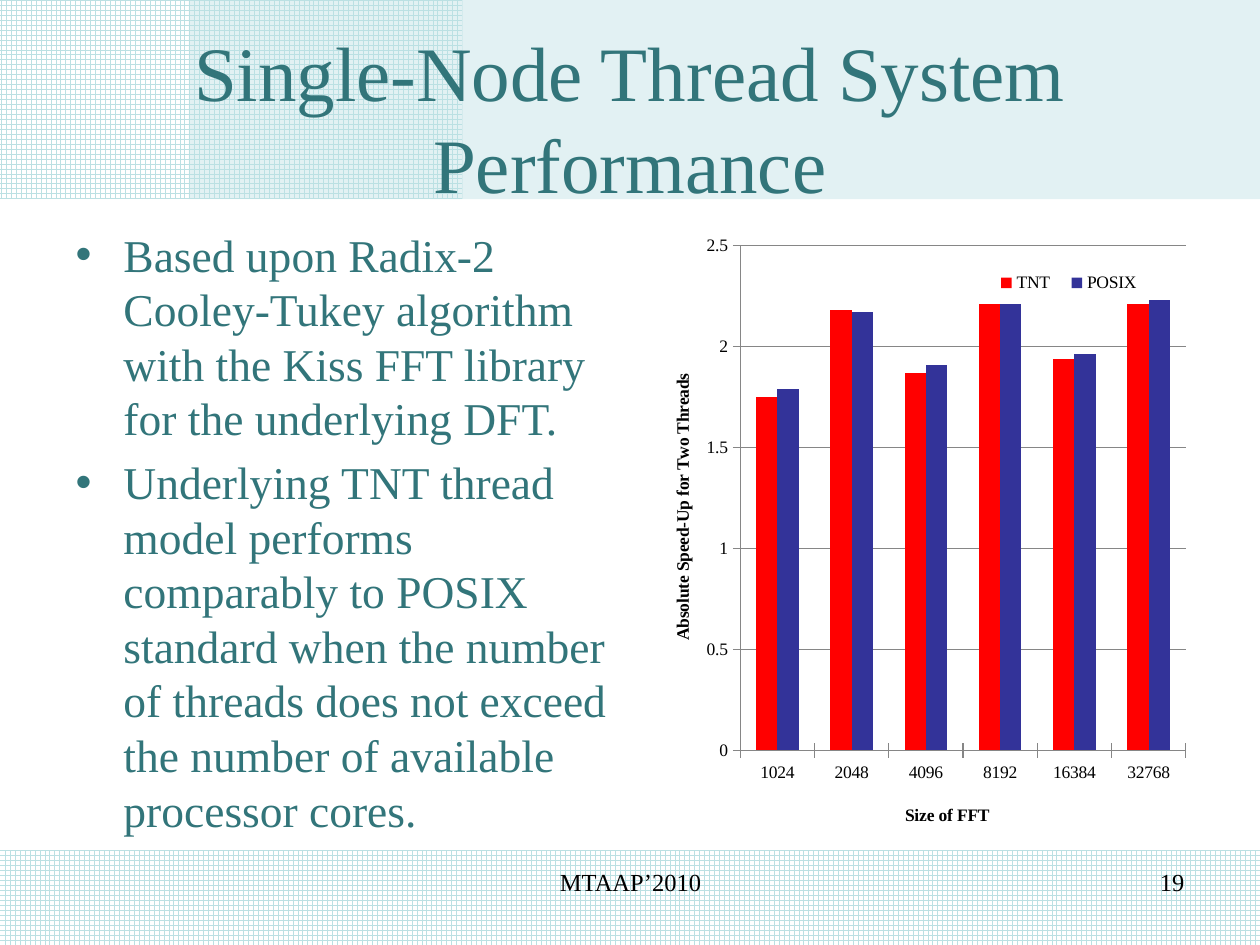
from dataclasses import dataclass
from typing import Optional

from lxml import etree
from pptx import Presentation
from pptx.chart.data import CategoryChartData
from pptx.dml.color import RGBColor
from pptx.enum.chart import XL_CHART_TYPE, XL_LEGEND_POSITION, XL_TICK_MARK
from pptx.enum.dml import MSO_PATTERN
from pptx.enum.shapes import MSO_SHAPE
from pptx.enum.text import MSO_ANCHOR, MSO_AUTO_SIZE, PP_ALIGN
from pptx.oxml.ns import qn
from pptx.util import Inches, Pt

CLUSTERED = XL_CHART_TYPE.COLUMN_CLUSTERED
LEGEND_RIGHT = XL_LEGEND_POSITION.RIGHT
CROSS = XL_TICK_MARK.CROSS
GRID_PATTERN = MSO_PATTERN.LARGE_GRID
PROCESS = MSO_SHAPE.FLOWCHART_PROCESS
MIDDLE, TOP = MSO_ANCHOR.MIDDLE, MSO_ANCHOR.TOP
CENTER, LEFT, RIGHT = PP_ALIGN.CENTER, PP_ALIGN.LEFT, PP_ALIGN.RIGHT

FONT = "Times New Roman"
COLORS = {
    "band": "BBE0E3", "paper": "FFFFFF", "heading": "32757A",
    "ink": "000000", "rule": "868686", "TNT": "FF0000", "POSIX": "333399",
}
WIDTH, HEIGHT = 10, 7.5
MARGIN = 0.5
COLUMN = 4.42
CONTENT_TOP, CONTENT_HEIGHT = 1.75, 4.95
HEADER_HEIGHT, FOOTER_TOP = 1.58, 6.75
BULLET_INDENT = 0.38

POINTS = [
    "Based upon Radix-2 Cooley-Tukey algorithm with the Kiss FFT library "
    "for the underlying DFT.",
    "Underlying TNT thread model performs comparably to POSIX standard when "
    "the number of threads does not exceed the number of available "
    "processor cores.",
]
FFT_SIZES = ["1024", "2048", "4096", "8192", "16384", "32768"]
SPEEDUPS = {
    "TNT": [1.75, 2.18, 1.87, 2.21, 1.94, 2.21],
    "POSIX": [1.79, 2.17, 1.91, 2.21, 1.96, 2.23],
}


@dataclass(frozen=True)
class Box:
    left: float
    top: float
    width: float
    height: float

    def emu(self) -> list:
        return [Inches(v) for v in (self.left, self.top, self.width, self.height)]


@dataclass(frozen=True)
class Band:
    box: Box
    alpha: Optional[int] = None


@dataclass(frozen=True)
class FooterText:
    box: Box
    text: str
    align: int


BANDS = [
    Band(Box(0, FOOTER_TOP, WIDTH, HEIGHT - FOOTER_TOP)),
    Band(Box(0, 0, 3.67, HEADER_HEIGHT)),
    Band(Box(1.5, 0, WIDTH - 1.5, HEADER_HEIGHT), alpha=42),
]
FOOTERS = [
    FooterText(Box(3.42, 6.83, 3.17, 0.52), "MTAAP’2010", CENTER),
    FooterText(Box(7.17, 6.83, 2.33, 0.52), "19", RIGHT),
]


def rgb(name: str) -> RGBColor:
    return RGBColor.from_string(COLORS[name])


def style(font, size: float, color: str, bold: bool = False) -> None:
    font.name, font.size, font.bold = FONT, Pt(size), bold
    font.color.rgb = rgb(color)


def draw_band(slide, band: Band, depth: int) -> None:
    shape = slide.shapes.add_shape(PROCESS, *band.box.emu())
    shape.shadow.inherit = False
    shape.line.fill.background()
    if band.alpha is None:
        shape.fill.patterned()
        shape.fill.pattern = GRID_PATTERN
        shape.fill.fore_color.rgb = rgb("band")
        shape.fill.back_color.rgb = rgb("paper")
    else:
        shape.fill.solid()
        shape.fill.fore_color.rgb = rgb("band")
        color = shape.element.spPr.find(".//" + qn("a:srgbClr"))
        etree.SubElement(color, qn("a:alpha"), val=str(band.alpha * 1000))
    shape.element.getparent().insert(2 + depth, shape.element)


def fill_text(shape, box: Box, texts: list, size: float, color: str,
              align: int, anchor: int, bulleted: bool = False) -> None:
    shape.left, shape.top, shape.width, shape.height = box.emu()
    frame = shape.text_frame
    frame.word_wrap = True
    frame.auto_size = MSO_AUTO_SIZE.NONE
    frame.vertical_anchor = anchor
    frame.text = "\n".join(texts)
    for index, paragraph in enumerate(frame.paragraphs):
        if bulleted:
            props = paragraph._p.get_or_add_pPr()
            props.set("marL", str(Inches(BULLET_INDENT)))
            props.set("indent", str(-Inches(BULLET_INDENT)))
            etree.SubElement(props, qn("a:buChar"), char="•")
        paragraph.alignment = align
        paragraph.space_before = Pt(0.2 * size if index else 0)
        style(paragraph.font, size, color)


def place(part, index: int, inner: bool = False, **shares: float) -> None:
    for stale in part.findall(qn("c:layout")):
        part.remove(stale)
    layout = etree.Element(qn("c:layout"))
    manual = etree.SubElement(layout, qn("c:manualLayout"))
    if inner:
        etree.SubElement(manual, qn("c:layoutTarget"), val="inner")
    for mode in ("xMode", "yMode"):
        etree.SubElement(manual, qn("c:" + mode), val="edge")
    for key, share in shares.items():
        etree.SubElement(manual, qn("c:" + key), val=str(share))
    part.insert(index, layout)


def format_axis(axis, title: str, x: float, y: float) -> None:
    axis.major_tick_mark = CROSS
    axis.format.line.color.rgb = rgb("rule")
    frame = axis.axis_title.text_frame
    frame.text = title
    style(frame.paragraphs[0].font, 10, "ink", bold=True)
    place(axis.axis_title._element, 1, x=x, y=y)


def draw_speedup_chart(slide, box: Box) -> None:
    data = CategoryChartData()
    data.categories = FFT_SIZES
    for name, values in SPEEDUPS.items():
        data.add_series(name, values)
    chart = slide.shapes.add_chart(CLUSTERED, *box.emu(), data).chart
    style(chart.font, 10, "ink")
    chart.has_title = False
    plot = chart.plots[0]
    plot.vary_by_categories = False
    plot.gap_width, plot.overlap = 150, 0
    for series in plot.series:
        series.format.fill.solid()
        series.format.fill.fore_color.rgb = rgb(series.name)

    format_axis(chart.category_axis, "Size of FFT", 0.47, 0.93)
    speedup_axis = chart.value_axis
    format_axis(speedup_axis, "Absolute Speed-Up for Two Threads", 0.05, 0.24)
    speedup_axis.minimum_scale, speedup_axis.maximum_scale = 0, 2.5
    speedup_axis.major_unit = 0.5
    speedup_axis.has_major_gridlines = True
    speedup_axis.major_gridlines.format.line.color.rgb = rgb("rule")

    chart.has_legend = True
    chart.legend.position = LEGEND_RIGHT
    chart.legend.include_in_layout = True
    place(chart.legend._element, 1, x=0.62, y=0.07, w=0.3, h=0.06)
    plot_area = chart._chartSpace.find(".//" + qn("c:plotArea"))
    place(plot_area, 0, inner=True, x=0.18, y=0.04, w=0.8, h=0.81)


def main() -> None:
    deck = Presentation()
    deck.slide_width, deck.slide_height = Inches(WIDTH), Inches(HEIGHT)
    slide = deck.slides.add_slide(deck.slide_layouts[1])
    title, body = slide.placeholders
    for depth, band in enumerate(BANDS):
        draw_band(slide, band, depth)
    fill_text(title, Box(MARGIN, 0.3, WIDTH - 2 * MARGIN, 1.25),
              ["Single-Node Thread System Performance"],
              44, "heading", CENTER, MIDDLE)
    fill_text(body, Box(MARGIN, CONTENT_TOP, COLUMN, CONTENT_HEIGHT),
              POINTS, 26, "heading", LEFT, TOP, bulleted=True)
    for footer in FOOTERS:
        label = slide.shapes.add_textbox(*footer.box.emu())
        fill_text(label, footer.box, [footer.text], 14, "ink", footer.align, TOP)
    draw_speedup_chart(slide, Box(WIDTH - MARGIN - COLUMN, CONTENT_TOP,
                                  COLUMN, CONTENT_HEIGHT))
    deck.save("out.pptx")


if __name__ == "__main__":
    main()
